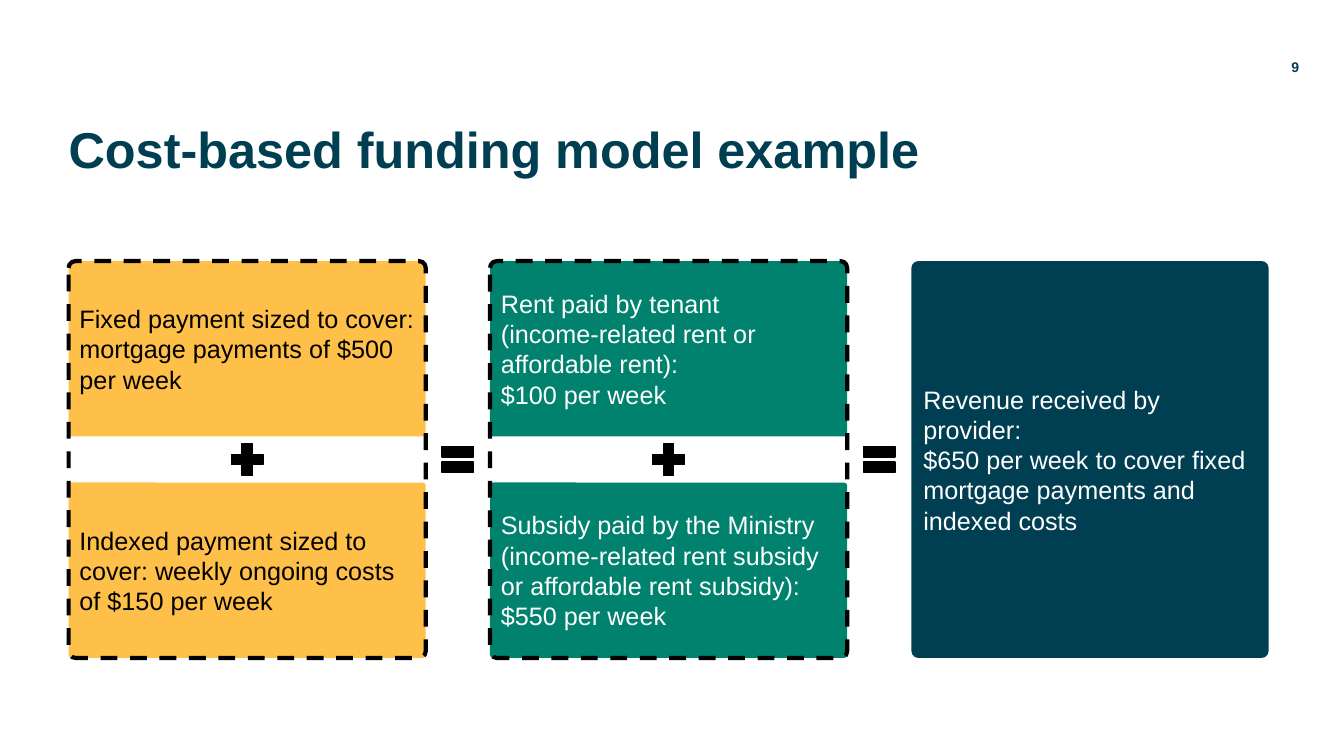
from pptx import Presentation
from pptx.dml.color import RGBColor
from pptx.enum.dml import MSO_LINE_DASH_STYLE as Dash
from pptx.enum.shapes import MSO_SHAPE as Preset
from pptx.enum.text import MSO_ANCHOR as Anchor, PP_ALIGN as Align
from pptx.util import Cm, Pt

COLORS = {"navy": "003E52", "amber": "FFC04A", "green": "00826E", "black": "000000", "white": "FFFFFF"}

LEFT, TOP, COLUMN_W, COLUMN_H, PITCH = 1.73, 6.58, 9, 10, 10.62
CARD_H, SIGN, CORNER = 4.42, 1.09, 0.019


def color(name):
    return RGBColor.from_string(COLORS[name])


def write(frame, lines, size, ink, bold=False, line_spacing=None, align=Align.LEFT, **frame_format):
    for key, value in {"word_wrap": True, **frame_format}.items():
        setattr(frame, key, value)
    for index, line in enumerate(lines):
        paragraph = frame.paragraphs[0] if index == 0 else frame.add_paragraph()
        paragraph.text = line
        paragraph.alignment = align
        paragraph.line_spacing = line_spacing
        for key, value in {"name": "Arial", "size": Pt(size), "bold": bold}.items():
            setattr(paragraph.font, key, value)
        paragraph.font.color.rgb = color(ink)


def add_text(slide, box, lines, **text_format):
    frame = slide.shapes.add_textbox(*map(Cm, box)).text_frame
    write(frame, lines, ink="navy", bold=True, **text_format)


def add_block(shapes, preset, box, fill=None):
    block = shapes.add_shape(preset, *map(Cm, box))
    block.shadow.inherit = False
    block.line.fill.background()
    if fill:
        block.fill.solid()
        block.fill.fore_color.rgb = color(fill)
    else:
        block.fill.background()
    if preset == Preset.ROUNDED_RECTANGLE:
        block.adjustments[0] = CORNER
    return block


def add_outline(block, width, dash=None):
    block.line.color.rgb = color("black")
    block.line.width = Pt(width)
    block.line.dash_style = dash


def add_card(shapes, box, lines, fill, ink):
    card = add_block(shapes, Preset.ROUNDED_RECTANGLE, box, fill)
    write(card.text_frame, lines, 18, ink, vertical_anchor=Anchor.MIDDLE)


def add_sign(shapes, preset, center_x, center_y):
    box = (center_x - SIGN / 2, center_y - SIGN / 2, SIGN, SIGN)
    add_outline(add_block(shapes, preset, box, "black"), 1)


def add_sum(slide, box, terms, fill, ink):
    left, top, width, height = box
    shapes = slide.shapes.add_group_shape().shapes
    for term, card_top in zip(terms, (top, top + height - CARD_H)):
        add_card(shapes, (left, card_top, width, CARD_H), term, fill, ink)
    add_outline(add_block(shapes, Preset.ROUNDED_RECTANGLE, box), 3, Dash.DASH)
    add_sign(shapes, Preset.MATH_PLUS, left + width / 2, top + height / 2)


def add_header(slide):
    add_text(slide, (31.17, 1.17, 1.57, 1.02), ["9"], size=10, align=Align.RIGHT,
             vertical_anchor=Anchor.MIDDLE, margin_right=0)
    add_text(slide, (LEFT, 3.15, 30.4, 2.44), ["Cost-based funding model example"], size=36,
             line_spacing=0.9, margin_left=0, margin_top=0, margin_right=0, margin_bottom=0)


def add_equation(slide):
    costs, sources, revenue = [(LEFT + i * PITCH, TOP, COLUMN_W, COLUMN_H) for i in range(3)]
    add_sum(slide, costs, [
        ["Fixed payment sized to cover:", "mortgage payments of $500 per week"],
        ["Indexed payment sized to cover: weekly ongoing costs of $150 per week"],
    ], "amber", "black")
    add_sum(slide, sources, [
        ["Rent paid by tenant", "(income-related rent or affordable rent):", "$100 per week"],
        ["Subsidy paid by the Ministry", "(income-related rent subsidy or affordable rent subsidy):",
         "$550 per week"],
    ], "green", "white")
    add_card(slide.shapes, revenue, [
        "Revenue received by provider:",
        "$650 per week to cover fixed mortgage payments and indexed costs",
    ], "navy", "white")
    for column in (costs, sources):
        add_sign(slide.shapes, Preset.MATH_EQUAL, column[0] + (COLUMN_W + PITCH) / 2, TOP + COLUMN_H / 2)


def main():
    deck = Presentation()
    deck.slide_width, deck.slide_height = Cm(33.87), Cm(19.05)
    slide = deck.slides.add_slide(deck.slide_layouts[6])
    add_header(slide)
    add_equation(slide)
    deck.save("out.pptx")


if __name__ == "__main__":
    main()
